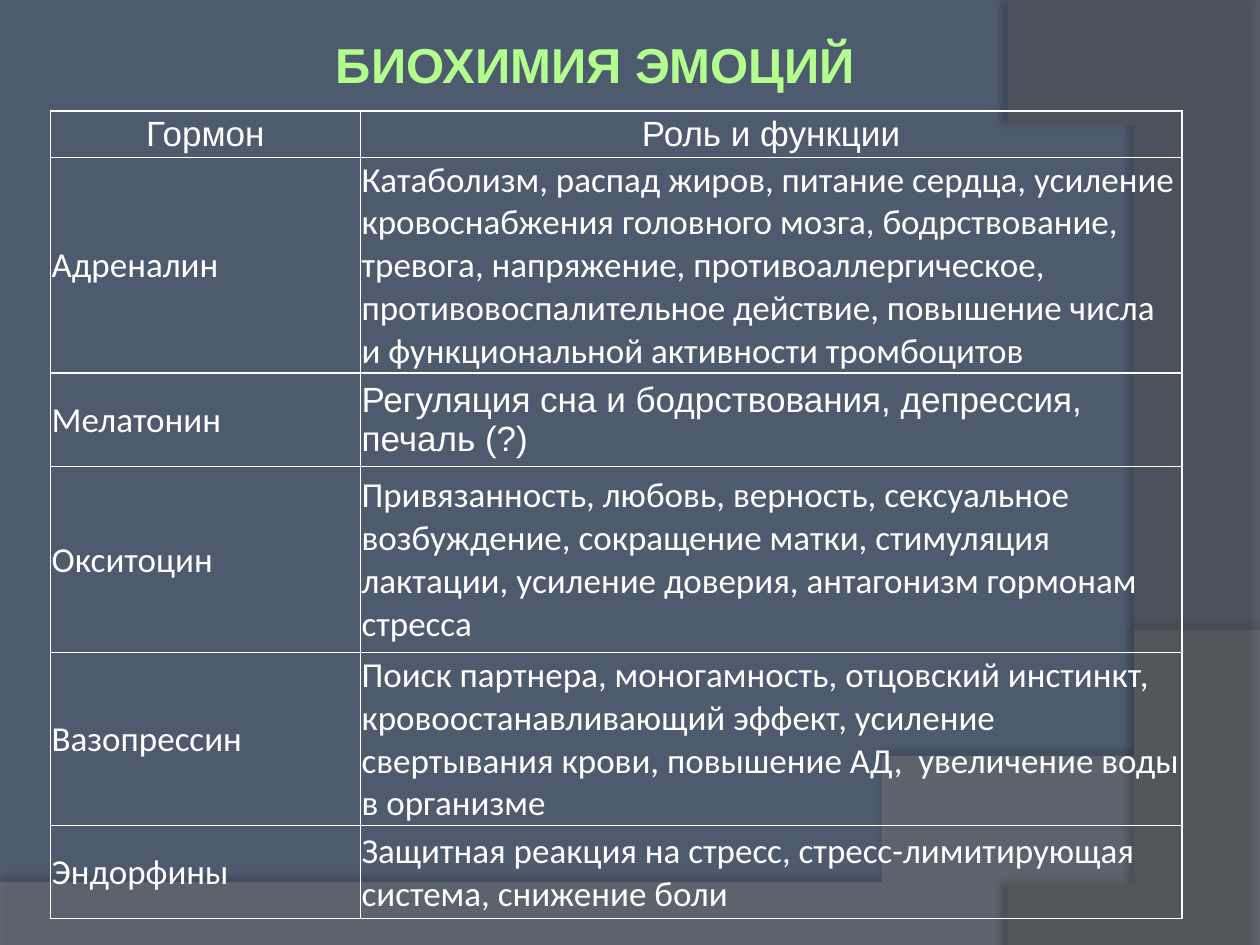
import pptx
import pptx.util
import pptx.dml.color
import pptx.enum.text
import pptx.oxml
import pptx.oxml.ns

Inches, Pt = pptx.util.Inches, pptx.util.Pt
ALIGN, ANCHOR = pptx.enum.text.PP_ALIGN, pptx.enum.text.MSO_ANCHOR
NS = pptx.oxml.ns.nsdecls("a")
HEADER = ("Гормон", "Роль и функции")
HORMONES = [
    ("Адреналин", "Катаболизм, распад жиров, питание сердца, усиление кровоснабжения "
     "головного мозга, бодрствование, тревога, напряжение, противоаллергическое, "
     "противовоспалительное действие, повышение числа и функциональной активности тромбоцитов"),
    ("Мелатонин", "Регуляция сна и бодрствования, депрессия, печаль (?)"),
    ("Окситоцин", "Привязанность, любовь, верность, сексуальное возбуждение, сокращение матки, "
     "стимуляция лактации, усиление доверия, антагонизм гормонам стресса"),
    ("Вазопрессин", "Поиск партнера, моногамность, отцовский инстинкт, кровоостанавливающий эффект, "
     "усиление свертывания крови, повышение АД,  увеличение воды в организме"),
    ("Эндорфины", "Защитная реакция на стресс, стресс-лимитирующая система, снижение боли"),
]
COLS = (2.46, 6.52)
ROWS = (0.37, 1.71, 0.74, 1.48, 1.37, 0.74)


def rgb(value):
    return pptx.dml.color.RGBColor.from_string(value)


def bezier(points, steps=40):
    curve = []
    for i in range(1, steps + 1):
        t = i / steps
        weights = ((1 - t) ** 3, 3 * t * (1 - t) ** 2, 3 * t * t * (1 - t), t ** 3)
        curve.append(tuple(sum(w * p[k] for w, p in zip(weights, points)) for k in (0, 1)))
    return curve


class Deck:
    """Holds the style and the current slide, with a method for each kind of element."""

    white, accent, background = "FFFFFF", "B2FF8E", "4E5B6F"
    heading, body = "Arial", "Calibri"

    def __init__(self):
        self.prs = pptx.Presentation()
        self.prs.slide_width, self.prs.slide_height = Inches(10), Inches(7.5)
        self.s = self.prs.slides.add_slide(self.prs.slide_layouts[5])
        fill = self.s.background.fill
        fill.solid()
        fill.fore_color.rgb = rgb(self.background)

    def text(self, tf, text, align, color, **font):
        p = tf.paragraphs[0]
        p.alignment = align
        r = p.add_run()
        r.text = text
        r.font.color.rgb = rgb(color)
        for name, value in font.items():
            setattr(r.font, name, value)

    def wave(self, corners, curve, color, alpha, shadow_alpha, dist, angle):
        points = corners + bezier([corners[-1]] + curve)
        builder = self.s.shapes.build_freeform(*points[0], scale=Inches(1))
        builder.add_line_segments(points[1:], close=True)
        sp = builder.convert_to_shape()
        sp.fill.solid()
        sp.fill.fore_color.rgb = rgb(color)
        sp.line.fill.background()
        sp.shadow.inherit = False
        props = sp.element.spPr
        props.find(".//" + pptx.oxml.ns.qn("a:srgbClr")).append(
            pptx.oxml.parse_xml(f'<a:alpha {NS} val="{alpha * 1000}"/>'))
        props.find(pptx.oxml.ns.qn("a:effectLst")).append(pptx.oxml.parse_xml(
            f'<a:outerShdw {NS} blurRad="{Pt(4)}" dist="{Pt(dist)}" dir="{angle * 60000}" '
            f'algn="ctr" rotWithShape="0"><a:srgbClr val="000000">'
            f'<a:alpha val="{shadow_alpha * 1000}"/></a:srgbClr></a:outerShdw>'))

    def title(self, text, left, top, width, height):
        sp = self.s.shapes.title
        box = dict(left=left, top=top, width=width, height=height)
        for name, value in box.items():
            setattr(sp, name, Inches(value))
        sp.element.getparent().append(sp.element)
        tf = sp.text_frame
        tf.vertical_anchor = ANCHOR.MIDDLE
        tf.word_wrap = True
        self.text(tf, text, ALIGN.CENTER, self.accent, size=Pt(28), bold=True, name=self.heading)

    def cell(self, cell, text, align, font):
        margins = dict(margin_left=0.01, margin_right=0.01, margin_top=0.01, margin_bottom=0)
        for name, value in margins.items():
            setattr(cell, name, Inches(value))
        cell.vertical_anchor = ANCHOR.MIDDLE
        cell.fill.background()
        props = cell._tc.get_or_add_tcPr()
        for i, side in enumerate("LRTB"):
            props.insert(i, pptx.oxml.parse_xml(
                f'<a:ln{side} {NS} w="{Pt(1)}"><a:solidFill><a:srgbClr val="{self.white}"/>'
                f'</a:solidFill></a:ln{side}>'))
        self.text(cell.text_frame, text, align, self.white, size=Pt(20), name=font)

    def table(self, rows, left, top, widths, heights, heading_cells):
        table = self.s.shapes.add_table(
            len(rows), len(widths), Inches(left), Inches(top),
            Inches(sum(widths)), Inches(sum(heights))).table
        table.first_row = table.horz_banding = False
        for column, width in zip(table.columns, widths):
            column.width = Inches(width)
        for row, height in zip(table.rows, heights):
            row.height = Inches(height)
        for i, row in enumerate(rows):
            for j, text in enumerate(row):
                self.cell(table.cell(i, j), text, ALIGN.LEFT if i else ALIGN.CENTER,
                          self.heading if (i, j) in heading_cells else self.body)


def main():
    deck = Deck()
    deck.wave([(0, 7.05), (0, 7.5), (10, 7.5), (10, 5.2)],
              [(5.59, 7.29), (3.91, 7.19), (0, 7.05)], "7F7F7F", 45, 35, 3.5, 270)
    deck.wave([(10, 0.02), (10, 7.5), (8.21, 7.5)],
              [(9.35, 6.19), (10.18, 3), (8, 0)], "5E5E5E", 40, 45, 4, 180)
    deck.title("БИОХИМИЯ ЭМОЦИЙ", 0.57, -0.29, 8.31, 1.59)
    deck.table([HEADER] + HORMONES, 0.4, 0.88, COLS, ROWS, {(0, 0), (0, 1), (2, 1)})
    deck.prs.save("out.pptx")


if __name__ == "__main__":
    main()
